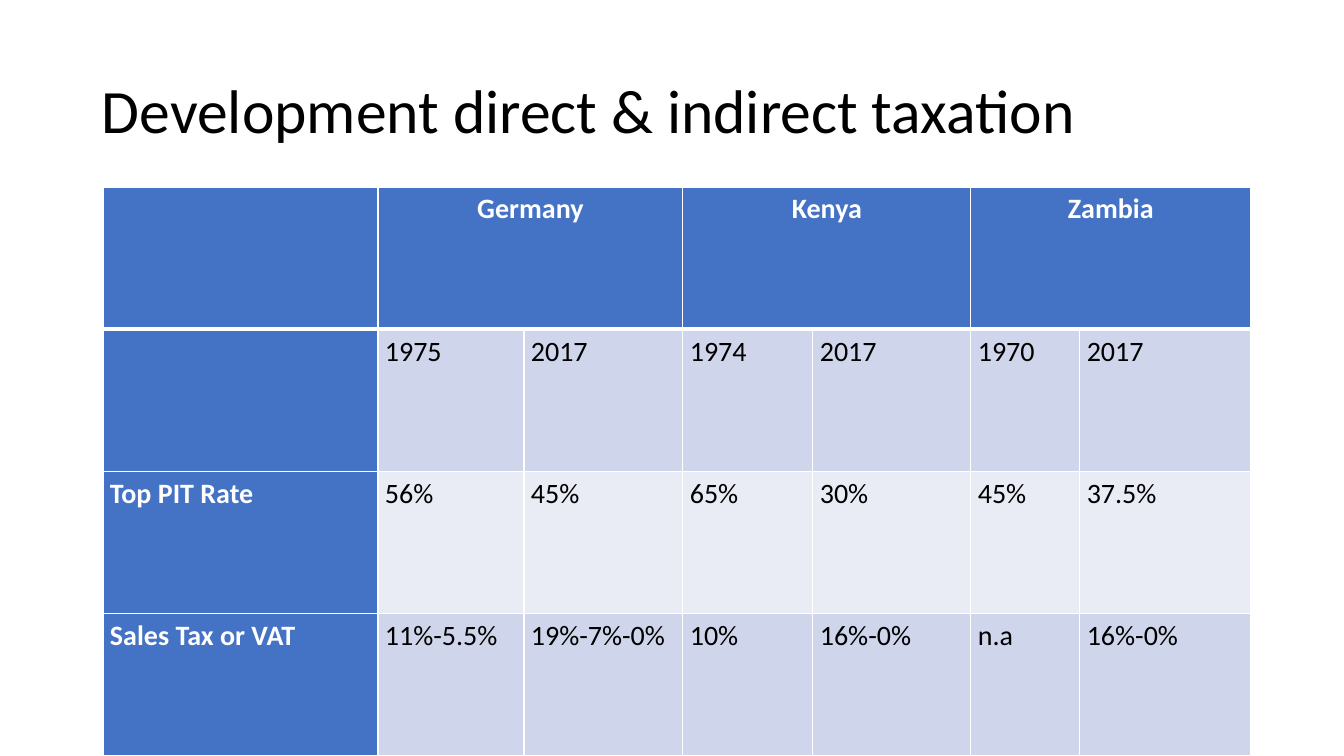
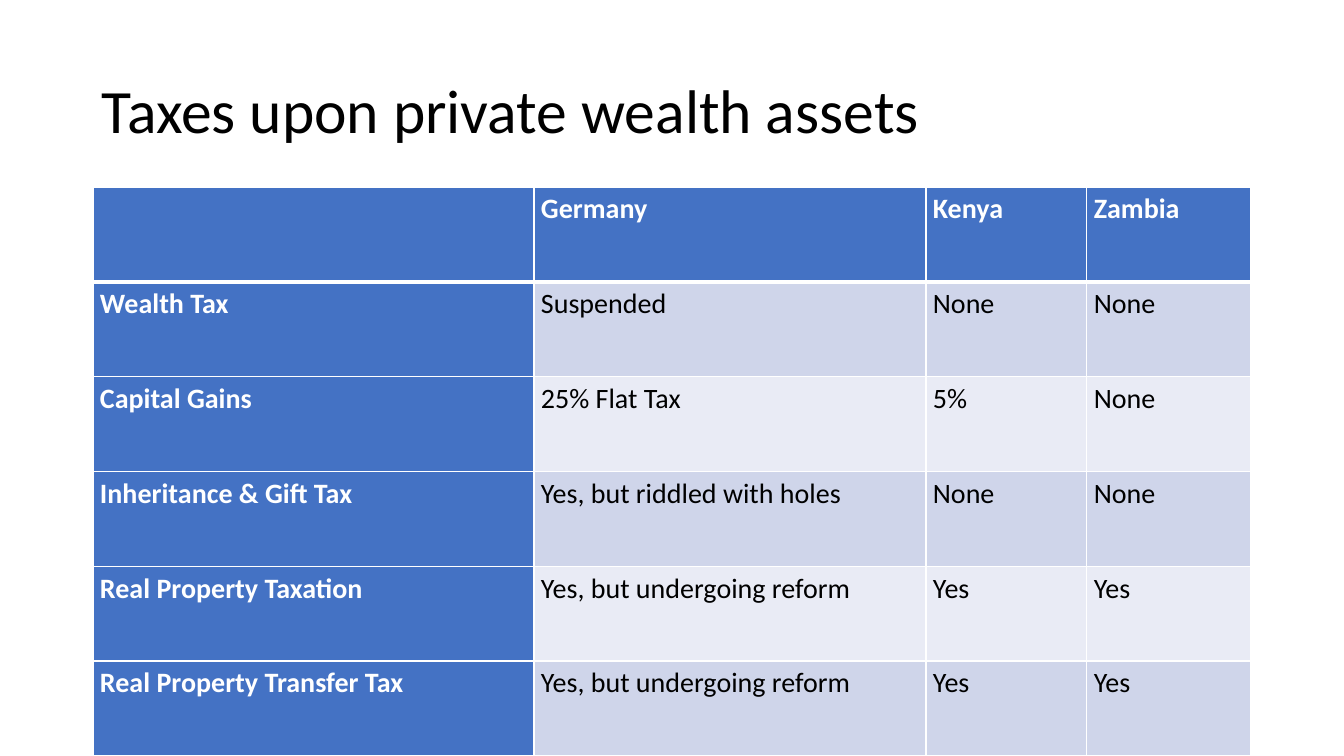
import pptx
import pptx.util
import pptx.dml.color
import pptx.enum.text
import pptx.oxml.ns
import lxml.etree

# Shared look
FONT = "Calibri"
BLUE, BAND, PALE = "4472C4", "CFD5EA", "E9EBF5"
WHITE, BLACK = "FFFFFF", "000000"
WIDE, HIGH = 1344, 756
SCALE = 12192000 / WIDE
LEFT, TOP, RIGHT = 92, 40, 1251
SPLIT = 187
ALIGN = pptx.enum.text.PP_ALIGN


def px(n):
    return pptx.util.Emu(round(n * SCALE))


def color(code):
    return pptx.dml.color.RGBColor.from_string(code)


def style(para, size, code, bold=False, space=1.15, align=ALIGN.LEFT):
    para.font.name = FONT
    para.font.size = pptx.util.Pt(size)
    para.font.bold = bold
    para.font.color.rgb = color(code)
    para.line_spacing = space
    para.alignment = align


def border(cell, sides):
    """Draw white cell edges; sides maps L, R, T, B to points."""
    props = cell._tc.get_or_add_tcPr()
    for spot, side in enumerate("LRTB"):
        line = lxml.etree.Element(pptx.oxml.ns.qn(f"a:ln{side}"),
                                  w=str(pptx.util.Pt(sides[side])))
        fill = lxml.etree.SubElement(line, pptx.oxml.ns.qn("a:solidFill"))
        lxml.etree.SubElement(fill, pptx.oxml.ns.qn("a:srgbClr"), val=WHITE)
        props.insert(spot, line)


def title(slide, box, text):
    frame = slide.shapes.add_textbox(*map(px, box)).text_frame
    frame.word_wrap = True
    frame.vertical_anchor = pptx.enum.text.MSO_ANCHOR.MIDDLE
    frame.text = text
    style(frame.paragraphs[0], 44, BLACK, space=0.9)


def table(slide, box, cols, rows, span):
    """Fill the box with a grid whose headings each cover span columns."""
    grid = slide.shapes.add_table(len(rows), len(cols), *map(px, box)).table
    for col, wide in zip(grid.columns, cols):
        col.width = px(wide)
    for row in grid.rows:
        row.height = px(box[3] / len(rows))

    for r, texts in enumerate(rows):
        for c, text in enumerate(texts):
            cell = grid.cell(r, c)
            head = r == 0 or c == 0
            cell.margin_left = cell.margin_right = px(7)
            cell.margin_top = cell.margin_bottom = 0
            cell.fill.solid()
            cell.fill.fore_color.rgb = color(
                BLUE if head else BAND if r % 2 else PALE)
            border(cell, {"L": 1, "R": 1, "T": 3 if r == 1 else 1,
                          "B": 3 if r == 0 else 1})
            cell.text = text
            mid = r == 0 and span > 1
            style(cell.text_frame.paragraphs[0], 20,
                  WHITE if head else BLACK, head,
                  align=ALIGN.CENTER if mid else ALIGN.LEFT)

    # Headings across several columns
    if span > 1:
        for c in range(1, len(cols), span):
            grid.cell(0, c).merge(grid.cell(0, c + span - 1))


def page(deck, text, left, cols, rows, span=1):
    slide = deck.slides.add_slide(deck.slide_layouts[6])
    title(slide, (LEFT, TOP, RIGHT - LEFT, SPLIT - TOP), text)
    table(slide, (left, SPLIT, sum(cols), HIGH - SPLIT), cols, rows, span)


RATES = [
    ["", "Germany", "", "Kenya", "", "Zambia", ""],
    ["", "1975", "2017", "1974", "2017", "1970", "2017"],
    ["Top PIT Rate", "56%", "45%", "65%", "30%", "45%", "37.5%"],
    ["Sales Tax or VAT", "11%-5.5%", "19%-7%-0%", "10%", "16%-0%", "n.a",
     "16%-0%"],
]
ASSETS = [
    ["", "Germany", "Kenya", "Zambia"],
    ["Wealth Tax", "Suspended", "None", "None"],
    ["Capital Gains", "25% Flat Tax", "5%", "None"],
    ["Inheritance & Gift Tax", "Yes, but riddled with holes", "None", "None"],
    ["Real Property Taxation", "Yes, but undergoing reform", "Yes", "Yes"],
    ["Real Property Transfer Tax", "Yes, but undergoing reform", "Yes", "Yes"],
]


def main():
    deck = pptx.Presentation()
    deck.slide_width, deck.slide_height = px(WIDE), px(HIGH)
    page(deck, "Development direct & indirect taxation", 103,
         [275, 146, 159, 130, 158, 109, 171], RATES, span=2)
    page(deck, "Taxes upon private wealth assets", 93,
         [441, 392, 161, 164], ASSETS)
    deck.save("out.pptx")


if __name__ == "__main__":
    main()
